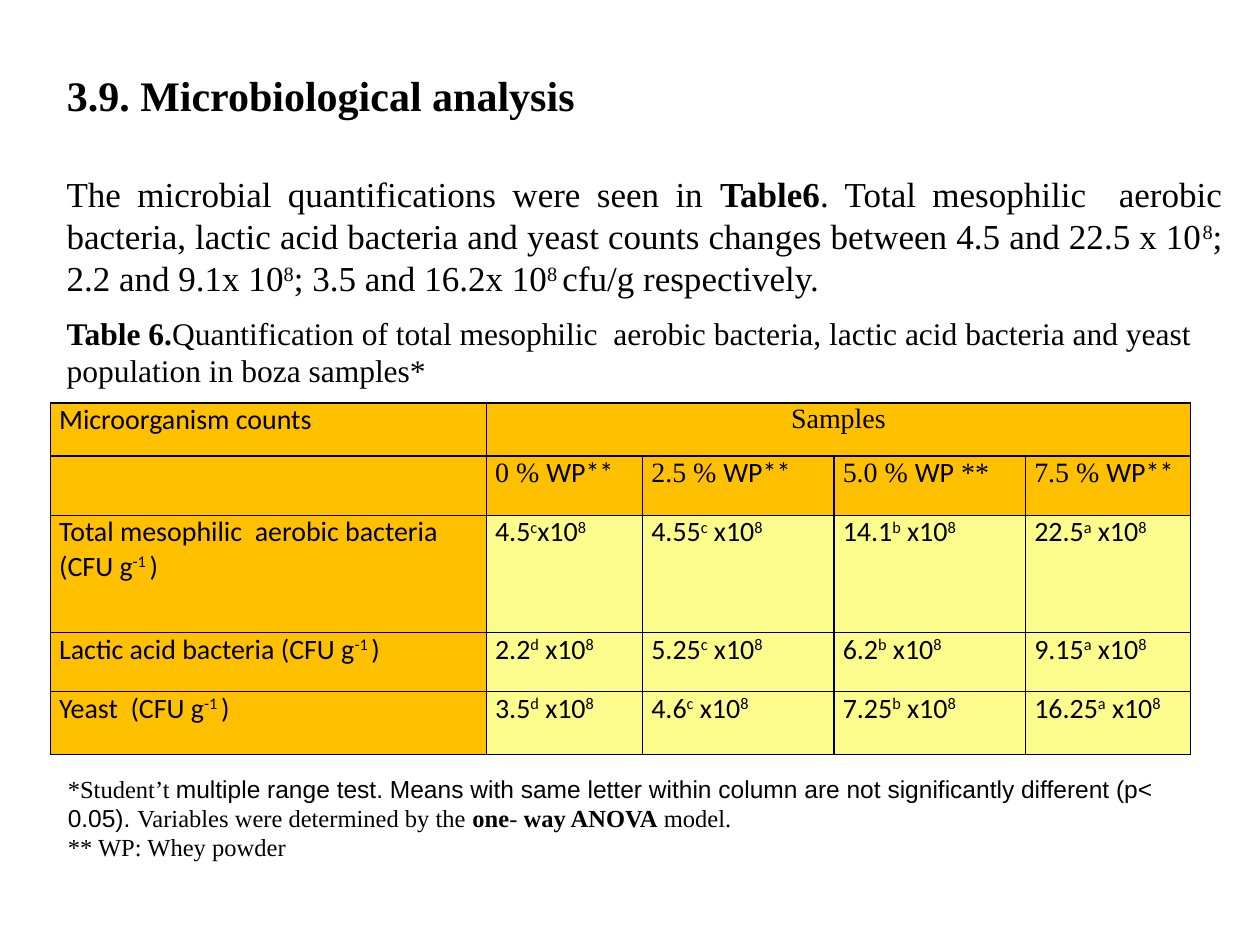
"""Build the slide on microbiological analysis of boza samples."""
from dataclasses import dataclass

from lxml import etree
from pptx import Presentation
from pptx.dml.color import RGBColor
from pptx.enum.text import MSO_ANCHOR, MSO_AUTO_SIZE, PP_ALIGN
from pptx.oxml.ns import qn
from pptx.util import Inches, Pt

LEFT, CENTER, JUSTIFY = PP_ALIGN.LEFT, PP_ALIGN.CENTER, PP_ALIGN.JUSTIFY
TOP, NO_FIT = MSO_ANCHOR.TOP, MSO_AUTO_SIZE.NONE
SERIF, SANS, BODY = "Times New Roman", "Arial", "Calibri"
BOLD, SUPER = "bold", "super"


@dataclass(frozen=True)
class Theme:
    ink: str = "000000"
    header: str = "FFC000"
    value: str = "FCFC8C"
    title: int = 24
    text: int = 20
    caption: int = 18
    table: int = 16
    note: int = 14
    border: int = 1


theme = Theme()


def write(para, size, runs, font=SERIF, align=LEFT):
    para.alignment = align
    for text, *styles in runs:
        span = para.add_run()
        span.text = text
        span.font.size = Pt(size)
        span.font.color.rgb = RGBColor.from_string(theme.ink)
        span.font.bold = BOLD in styles
        span.font.name = next((name for name in styles if name in (SERIF, SANS, BODY)), font)
        if SUPER in styles:
            span.font._element.set("baseline", "30000")


def style_cell(cell, color):
    cell.margin_left = cell.margin_right = Inches(0.07)
    cell.margin_top = cell.margin_bottom = 0
    properties = cell._tc.get_or_add_tcPr()
    for edge in ("a:lnL", "a:lnR", "a:lnT", "a:lnB"):
        line = etree.SubElement(properties, qn(edge), w=str(Pt(theme.border)))
        solid = etree.SubElement(line, qn("a:solidFill"))
        etree.SubElement(solid, qn("a:srgbClr"), val=theme.ink)
    cell.fill.solid()
    cell.fill.fore_color.rgb = RGBColor.from_string(color)


deck = Presentation()
deck.slide_width, deck.slide_height = Inches(10), Inches(7.5)
page = deck.slides.add_slide(deck.slide_layouts[5])

title = page.shapes.title
title.left, title.top = Inches(0.43), Inches(0.5)
title.width, title.height = Inches(9.37), Inches(0.5)
title.text_frame.vertical_anchor = TOP
title.text_frame.auto_size = NO_FIT
write(title.text_frame.paragraphs[0], theme.title, [("3.9. Microbiological analysis", BOLD)])

findings = [
    ("The microbial quantifications were seen in ",),
    ("Table6", BOLD),
    (". Total mesophilic  aerobic bacteria, lactic acid bacteria and yeast counts "
     "changes between 4.5 and 22.5 x 10",),
    ("8", SUPER),
    ("; 2.2 and 9.1x 10",),
    ("8", SUPER),
    ("; 3.5 and 16.2x 10",),
    ("8 ", SUPER),
    ("cfu/g respectively. ",),
]
caption = [
    ("Table 6.", BOLD),
    ("Quantification of total mesophilic  aerobic bacteria, lactic acid bacteria "
     "and yeast population in boza samples*",),
]
test_note = [
    ("*Student’t ",),
    ("multiple range test. Means with same letter within column are not "
     "significantly different (p< 0.05). ", SANS),
    ("Variables were determined by the ",),
    ("one", BOLD),
    ("- ",),
    ("way ANOVA", BOLD),
    (" model.",),
]
powder_note = [("** WP: Whey powder",)]

text_boxes = [
    (0.43, 1.32, 9.37, 1.1, theme.text, JUSTIFY, [findings]),
    (0.43, 2.44, 9.29, 0.68, theme.caption, LEFT, [caption]),
    (0.44, 6.09, 9.06, 0.81, theme.note, LEFT, [test_note, powder_note]),
]
for left, top, width, height, size, align, paragraphs in text_boxes:
    box = page.shapes.add_textbox(Inches(left), Inches(top), Inches(width), Inches(height))
    frame = box.text_frame
    frame.word_wrap = True
    for index, runs in enumerate(paragraphs):
        para = frame.add_paragraph() if index else frame.paragraphs[0]
        write(para, size, runs, align=align)

column_widths = [3.46, 1.24, 1.52, 1.52, 1.31]
row_heights = [0.42, 0.47, 0.93, 0.47, 0.5]
table = page.shapes.add_table(
    len(row_heights), len(column_widths), Inches(0.4), Inches(3.2),
    Inches(sum(column_widths)), Inches(sum(row_heights))).table
table.first_row = table.horz_banding = False
for column, width in zip(table.columns, column_widths):
    column.width = Inches(width)
for row, height in zip(table.rows, row_heights):
    row.height = Inches(height)
for row in range(len(row_heights)):
    for column in range(len(column_widths)):
        style_cell(table.cell(row, column), theme.value if row > 1 and column else theme.header)
table.cell(0, 1).merge(table.cell(0, 4))

write(table.cell(0, 0).text_frame.paragraphs[0], theme.table, [("Microorganism counts",)], BODY)
write(table.cell(0, 1).text_frame.paragraphs[0], theme.table, [("Samples",)], align=CENTER)

samples = [
    [("0 % ",), ("WP**", BODY)],
    [("2.5 % ",), ("WP**", BODY)],
    [("5.0 % ",), ("WP", BODY), (" **",)],
    [("7.5 % ",), ("WP**", BODY)],
]
for column, runs in enumerate(samples, 1):
    write(table.cell(1, column).text_frame.paragraphs[0], theme.table, runs)

counts = [
    ("Total mesophilic  aerobic bacteria",
     [("4.5", "c", "x10"), ("4.55", "c", " x10"), ("14.1", "b", " x10"), ("22.5", "a", " x10")]),
    ("Lactic acid bacteria",
     [("2.2", "d", " x10"), ("5.25", "c", " x10"), ("6.2", "b", " x10"), ("9.15", "a", " x10")]),
    ("Yeast ",
     [("3.5", "d", " x10"), ("4.6", "c", " x10"), ("7.25", "b", " x10"), ("16.25", "a", " x10")]),
]
for row, (organism, values) in enumerate(counts, 2):
    label = [(organism + " (CFU g",), ("-1 ", SUPER), (")",)]
    write(table.cell(row, 0).text_frame.paragraphs[0], theme.table, label, BODY)
    for column, (mean, letter, power) in enumerate(values, 1):
        runs = [(mean,), (letter, SUPER), (power,), ("8", SUPER)]
        write(table.cell(row, column).text_frame.paragraphs[0], theme.table, runs, BODY)

deck.save("out.pptx")
